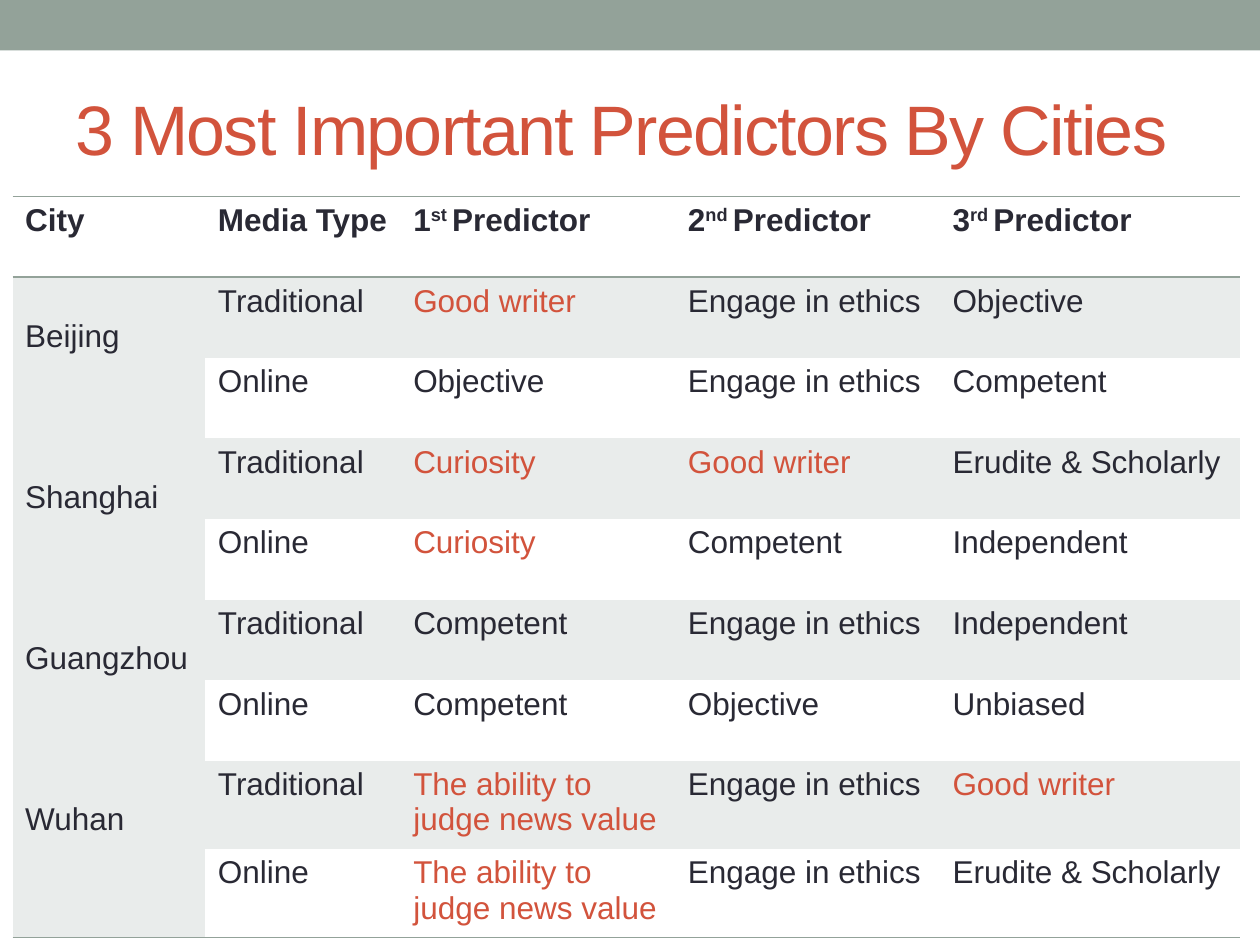
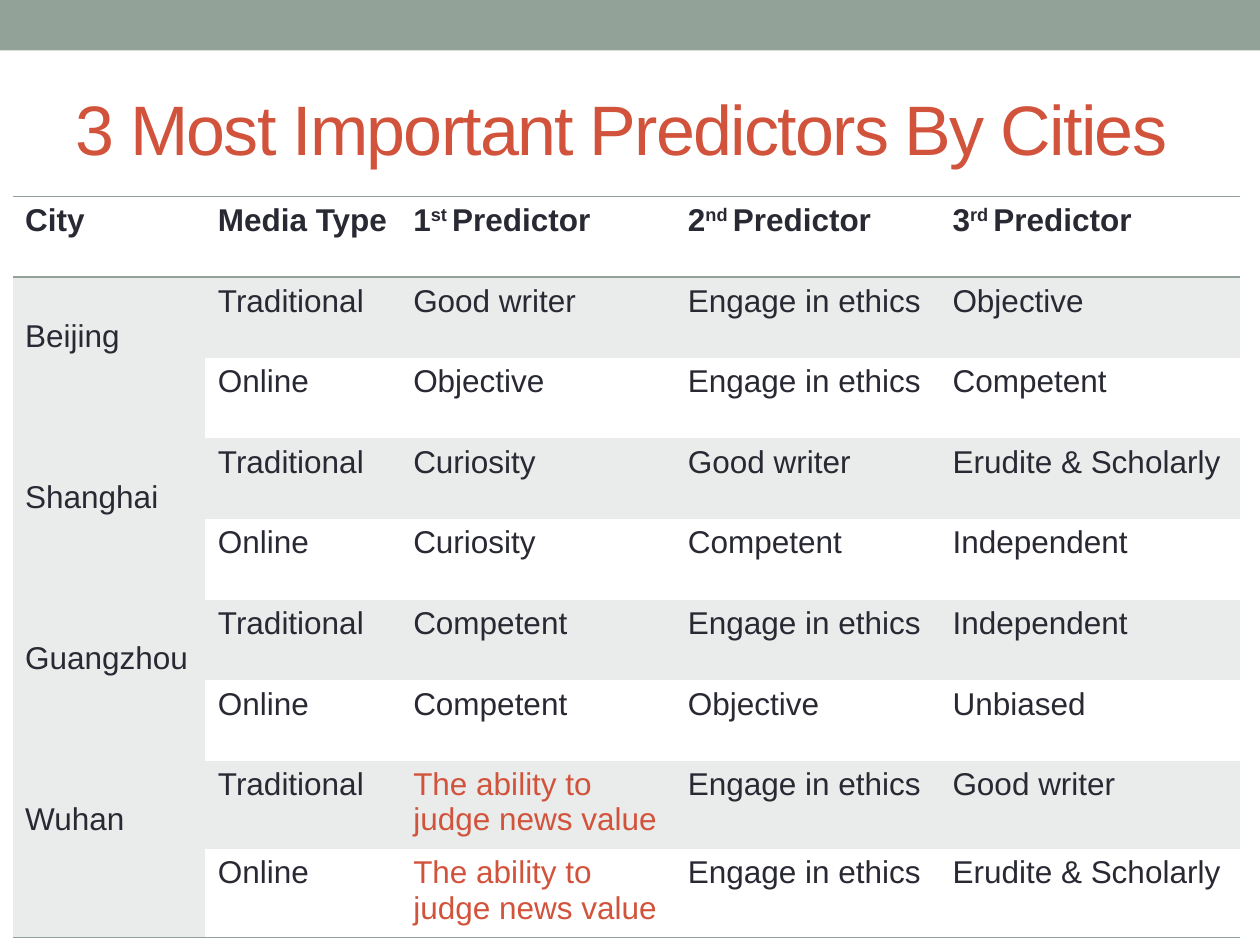
from lxml import etree
from pptx import Presentation
from pptx.dml.color import RGBColor
from pptx.enum.shapes import MSO_SHAPE
from pptx.enum.text import MSO_ANCHOR
from pptx.oxml.ns import qn
from pptx.util import Inches, Pt

RECTANGLE = MSO_SHAPE.RECTANGLE
MIDDLE = MSO_ANCHOR.MIDDLE

COLORS = {"sage": "93A299", "shade": "E9ECEB", "accent": "D2533C", "ink": "292934"}
FONT = "Arial"
PLAIN_TABLE_STYLE = "{2D5ABB26-0587-4C30-8999-92F81FD0307C}"

PAGE_WIDTH, PAGE_HEIGHT = 10, 7.5
BAND_BOX = (0, 0, PAGE_WIDTH, 0.4)
TITLE_BOX = (0.5, 0.47, 9, 1.08)
TABLE_BOX = (0.1, 1.56, 9.74, 5.76)
COLUMN_WIDTHS = [1.53, 1.55, 2.18, 2.1, 2.38]

TITLE = "3 Most Important Predictors By Cities"
NEWS_VALUE = "The ability to judge news value"
ORDINALS = [("1", "st "), ("2", "nd "), ("3", "rd ")]
# Each city has one row of predictors per media type
MEDIA_TYPES = ["Traditional", "Online"]
PREDICTORS = {
    "Beijing": [("Good writer", "Engage in ethics", "Objective"),
                ("Objective", "Engage in ethics", "Competent")],
    "Shanghai": [("Curiosity", "Good writer", "Erudite & Scholarly"),
                 ("Curiosity", "Competent", "Independent")],
    "Guangzhou": [("Competent", "Engage in ethics", "Independent"),
                  ("Competent", "Objective", "Unbiased")],
    "Wuhan": [(NEWS_VALUE, "Engage in ethics", "Good writer"),
              (NEWS_VALUE, "Engage in ethics", "Erudite & Scholarly")],
}
# Predictors picked out in the accent colour, one set per slide
HIGHLIGHTS = [{"Good writer", "Curiosity", NEWS_VALUE}, {NEWS_VALUE}]


def color(name):
    return RGBColor.from_string(COLORS[name])


def inches(box):
    return [Inches(length) for length in box]


def set_font(para, size, color_name, bold=False):
    para.font.name = FONT
    para.font.size = Pt(size)
    para.font.bold = bold
    para.font.color.rgb = color(color_name)


def add_band(page, box):
    band = page.shapes.add_shape(RECTANGLE, *inches(box))
    band.shadow.inherit = False
    band.fill.solid()
    band.fill.fore_color.rgb = color("sage")
    band.line.fill.background()


def add_title(page, box):
    frame = page.shapes.add_textbox(*inches(box)).text_frame
    frame.word_wrap = True
    frame.vertical_anchor = MIDDLE
    para = frame.paragraphs[0]
    span = para.add_run()
    span.text = TITLE
    span._r.get_or_add_rPr().set("spc", "-100")
    set_font(para, 40, "accent")


def fill_cell(cell, text, color_name="ink", shaded=False):
    para = cell.text_frame.paragraphs[0]
    para.text = text
    set_font(para, 18, color_name)
    if shaded:
        cell.fill.solid()
        cell.fill.fore_color.rgb = color("shade")


def add_rule(cell, side):
    """Draw a 1 pt rule on one side, given as lnT or lnB."""
    line = etree.Element(qn(f"a:{side}"), w=str(Pt(1)))
    paint = etree.SubElement(line, qn("a:solidFill"))
    etree.SubElement(paint, qn("a:srgbClr"), val=COLORS["sage"])
    cell._tc.get_or_add_tcPr().insert(0, line)


def fill_header(table):
    for column, text in enumerate(["City", "Media Type"]):
        table.cell(0, column).text_frame.paragraphs[0].text = text
    for column, (number, suffix) in enumerate(ORDINALS, start=2):
        para = table.cell(0, column).text_frame.paragraphs[0]
        for text in (number, suffix, "Predictor"):
            span = para.add_run()
            span.text = text
            if text == suffix:
                span._r.get_or_add_rPr().set("baseline", "30000")
    for column in range(len(COLUMN_WIDTHS)):
        cell = table.cell(0, column)
        set_font(cell.text_frame.paragraphs[0], 18, "ink", bold=True)
        add_rule(cell, "lnB")
        add_rule(cell, "lnT")


def fill_city(table, top_row, city, highlights):
    city_cell = table.cell(top_row, 0)
    city_cell.merge(table.cell(top_row + 1, 0))
    city_cell.margin_top = Inches(0.33)
    fill_cell(city_cell, city, shaded=True)
    for offset, (media, predictors) in enumerate(zip(MEDIA_TYPES, PREDICTORS[city])):
        for column, text in enumerate((media, *predictors), start=1):
            color_name = "accent" if text in highlights else "ink"
            fill_cell(table.cell(top_row + offset, column), text, color_name,
                      shaded=offset == 0)


def add_predictor_table(page, box, highlights):
    row_count = 1 + len(MEDIA_TYPES) * len(PREDICTORS)
    frame = page.shapes.add_table(row_count, len(COLUMN_WIDTHS), *inches(box))
    table = frame.table
    table.first_row = table.horz_banding = False
    table._tbl.tblPr.find(qn("a:tableStyleId")).text = PLAIN_TABLE_STYLE
    for column, width in zip(table.columns, COLUMN_WIDTHS):
        column.width = Inches(width)
    for row in table.rows:
        row.height = Inches(box[3] / row_count)

    fill_header(table)
    for index, city in enumerate(PREDICTORS):
        fill_city(table, 1 + index * len(MEDIA_TYPES), city, highlights)

    # Closing rule, also on the merged cell of the last city
    for column in range(len(COLUMN_WIDTHS)):
        add_rule(table.cell(row_count - 1, column), "lnB")
    add_rule(table.cell(row_count - len(MEDIA_TYPES), 0), "lnB")


def add_predictor_page(deck, highlights):
    page = deck.slides.add_slide(deck.slide_layouts[6])
    add_band(page, BAND_BOX)
    add_title(page, TITLE_BOX)
    add_predictor_table(page, TABLE_BOX, highlights)


def main():
    deck = Presentation()
    deck.slide_width = Inches(PAGE_WIDTH)
    deck.slide_height = Inches(PAGE_HEIGHT)
    for highlights in HIGHLIGHTS:
        add_predictor_page(deck, highlights)
    deck.save("out.pptx")


if __name__ == "__main__":
    main()
